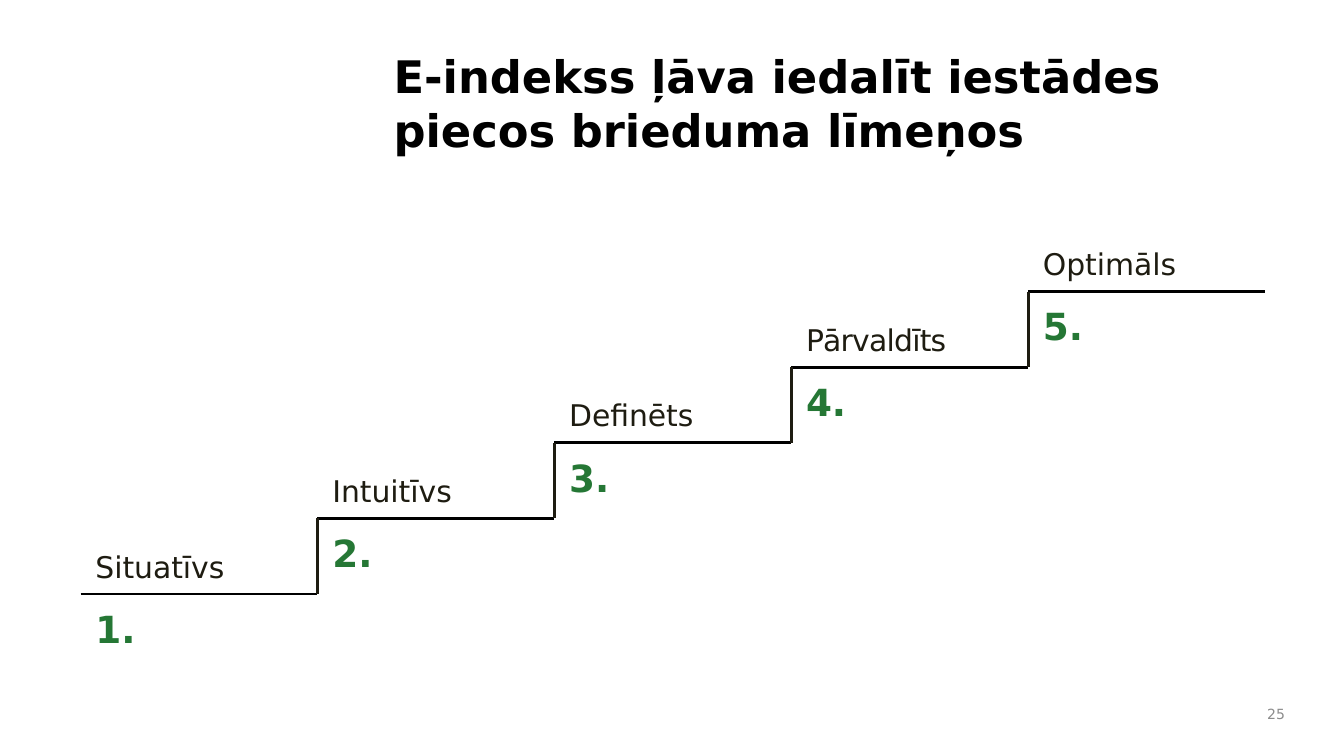
"""Builds a slide with the five maturity levels as a staircase."""
from pptx import Presentation
from pptx.dml.color import RGBColor
from pptx.enum.shapes import MSO_CONNECTOR
from pptx.enum.text import MSO_ANCHOR, PP_ALIGN
from pptx.oxml.ns import qn
from pptx.util import Inches, Pt
from lxml.etree import SubElement

BLACK = RGBColor(0x00, 0x00, 0x00)
DARK = RGBColor(0x1E, 0x1C, 0x11)
GREEN = RGBColor(0x25, 0x77, 0x35)
GRAY = RGBColor(0x8C, 0x8C, 0x8C)

LEVELS = [("Situatīvs", 0), ("Intuitīvs", 0), ("Definēts", 0),
          ("Pārvaldīts", -0.4), ("Optimāls", 0)]
FIRST_LEFT, FIRST_TOP = 0.6, 4.42
LAST_LEFT, LAST_TOP = 7.65, 2.17
STEP_WIDTH = (LAST_LEFT - FIRST_LEFT) / (len(LEVELS) - 1)
STEP_RISE = (FIRST_TOP - LAST_TOP) / (len(LEVELS) - 1)


def write(frame, text, *, size, color, bold=False, align=PP_ALIGN.LEFT, spacing=0):
    paragraph = frame.paragraphs[0]
    paragraph.alignment = align
    run = paragraph.add_run()
    run.text = text
    run.font.name = Staircase.FONT
    run.font.size = Pt(size)
    run.font.bold = bold
    run.font.color.rgb = color
    if spacing:
        run._r.get_or_add_rPr().set("spc", str(round(spacing * 100)))


class Staircase:
    FONT = "DejaVu Sans"
    LINE_WIDTH = Pt(1.5)

    def __init__(self, slide):
        self.slide = slide

    def text(self, text, left, top, width, height, *, insets,
             anchor=MSO_ANCHOR.TOP, wrap=True, **style):
        box = self.slide.shapes.add_textbox(
            Inches(left), Inches(top), Inches(width), Inches(height))
        frame = box.text_frame
        frame.word_wrap = wrap
        frame.vertical_anchor = anchor
        (frame.margin_left, frame.margin_top,
         frame.margin_right, frame.margin_bottom) = map(Inches, insets)
        write(frame, text, **style)

    def line(self, x1, y1, x2, y2, color):
        edge = self.slide.shapes.add_connector(
            MSO_CONNECTOR.STRAIGHT, Inches(x1), Inches(y1), Inches(x2), Inches(y2))
        edge.line.color.rgb = color
        edge.line.width = self.LINE_WIDTH
        SubElement(edge._element.spPr, qn("a:effectLst"))

    def step(self, index, label, spacing):
        left = FIRST_LEFT + index * STEP_WIDTH
        top = FIRST_TOP - index * STEP_RISE
        self.text(label, left + 0.07, top - 0.34, 1.63, 0.27, insets=(0.04, 0, 0, 0),
                  size=16, color=DARK, spacing=spacing)
        self.text(f"{index + 1}.", left + 0.07, top + 0.04, 0.34, 0.44,
                  insets=(0.04, 0.05, 0, 0.05), wrap=False,
                  size=20, color=GREEN, bold=True)
        self.line(left, top, left + STEP_WIDTH, top, BLACK)
        if index:
            self.line(left, top, left, top + STEP_RISE, DARK)


def main():
    presentation = Presentation()
    presentation.slide_width = Inches(10)
    presentation.slide_height = presentation.slide_width * 9 // 16
    staircase = Staircase(presentation.slides.add_slide(presentation.slide_layouts[6]))
    staircase.text("E-indekss ļāva iedalīt iestādes piecos brieduma līmeņos",
                   2.83, 0.31, 6.67, 0.96, insets=(0.1, 0, 0.1, 0.05),
                   anchor=MSO_ANCHOR.MIDDLE, size=24, color=BLACK, bold=True)
    for index, (label, spacing) in enumerate(LEVELS):
        staircase.step(index, label, spacing)
    staircase.text("25", 9.33, 5.19, 0.33, 0.25, insets=(0, 0.05, 0.1, 0.05),
                   anchor=MSO_ANCHOR.MIDDLE, size=7.5, color=GRAY, align=PP_ALIGN.RIGHT)
    presentation.save("out.pptx")


if __name__ == "__main__":
    main()
